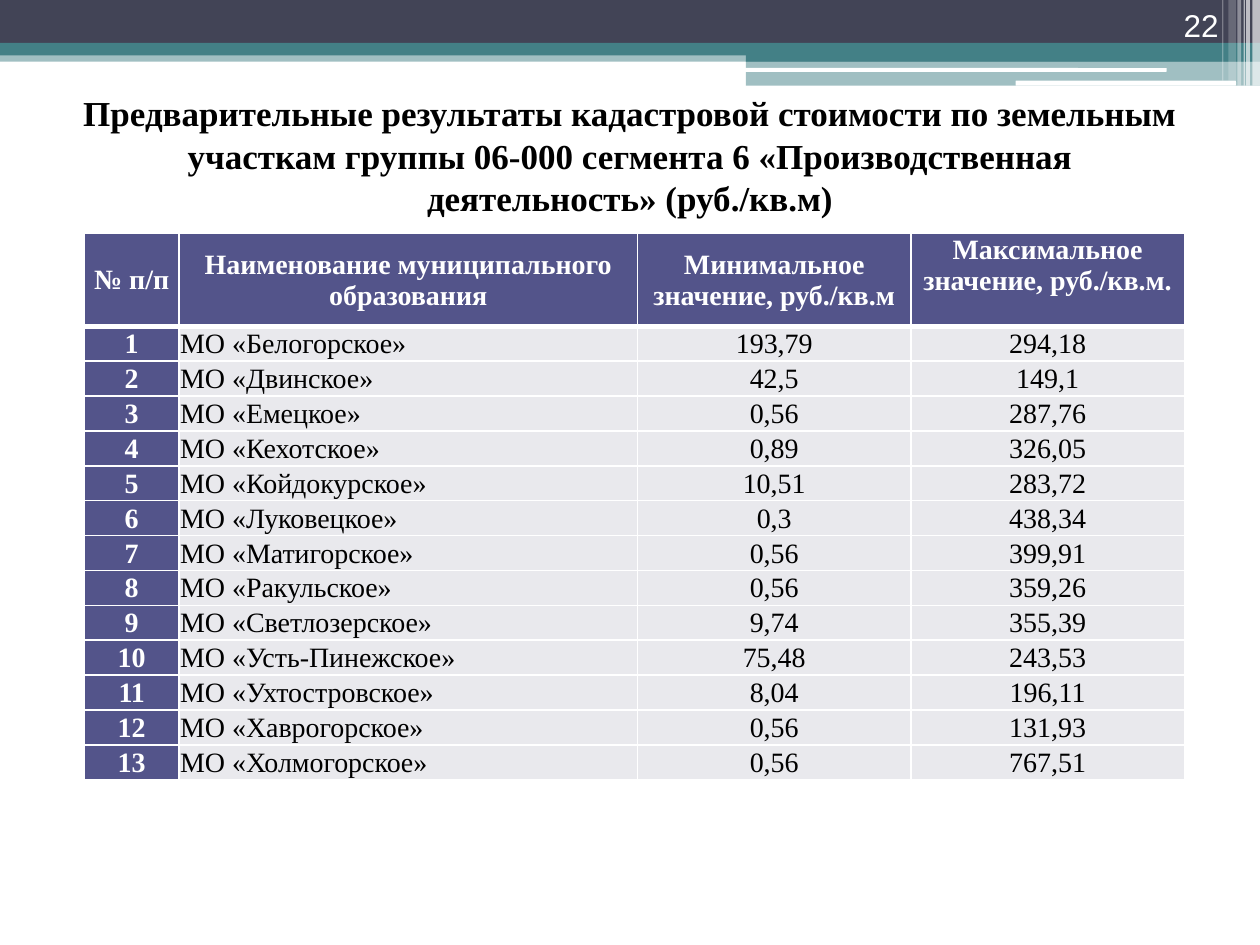
from lxml import etree
from pptx import Presentation
from pptx import util as u
from pptx.dml.color import RGBColor
from pptx.enum import shapes, text
from pptx.oxml import ns

WHITE, BLACK, NAVY, TEAL = "FFFFFF", "000000", "424456", "438086"
HEADER_FILL, BODY_FILL = "53548A", "E9E9ED"
SERIF = "Times New Roman"

TITLE = ("Предварительные результаты кадастровой стоимости по земельным участкам "
         "группы 06-000 сегмента 6 «Производственная деятельность» (руб./кв.м)")
HEADERS = ("№ п/п", "Наименование муниципального образования",
           "Минимальное значение, руб./кв.м", "Максимальное значение, руб./кв.м.")
MUNICIPALITIES = (
    ("Белогорское", "193,79", "294,18"),
    ("Двинское", "42,5", "149,1"),
    ("Емецкое", "0,56", "287,76"),
    ("Кехотское", "0,89", "326,05"),
    ("Койдокурское", "10,51", "283,72"),
    ("Луковецкое", "0,3", "438,34"),
    ("Матигорское", "0,56", "399,91"),
    ("Ракульское", "0,56", "359,26"),
    ("Светлозерское", "9,74", "355,39"),
    ("Усть-Пинежское", "75,48", "243,53"),
    ("Ухтостровское", "8,04", "196,11"),
    ("Хаврогорское", "0,56", "131,93"),
    ("Холмогорское", "0,56", "767,51"),
)
COLUMN_WIDTHS = (0.75, 3.64, 2.17, 2.17)
HEADER_HEIGHT, ROW_HEIGHT = 0.74, 0.26

# left, top, width, height, colour, opacity in percent
BANDS = (
    (0, 0.4, 10, 0.09, TEAL, 50),
    (0, 0, 10, 0.34, NAVY, 100),
    (0, 0.34, 10, 0.1, TEAL, 100),
    (5.92, 0.39, 4.08, 0.1, TEAL, 100),
    (5.92, 0.48, 4.08, 0.2, TEAL, 50),
)
ROUNDED_BARS = ((5.91, 0.54, 3.35, 0.03), (8.06, 0.64, 1.75, 0.04))
# left, width, height, opacity in percent
STRIPES = ((9.94, 0.06, 0.68, 65), (9.89, 0.03, 0.68, 65), (9.87, 0.01, 0.68, 60),
           (9.82, 0.03, 0.68, 40), (9.75, 0.06, 0.64, 20), (9.7, 0.01, 0.64, 30))


def paint(fill, colour):
    fill.solid()
    fill.fore_color.rgb = RGBColor.from_string(colour)


def add_bar(slide, left, top, width, height, colour, opacity=100,
            kind=shapes.MSO_SHAPE.RECTANGLE):
    bar = slide.shapes.add_shape(kind, *map(u.Inches, (left, top, width, height)))
    bar.shadow.inherit = False
    bar.line.fill.background()
    paint(bar.fill, colour)
    if opacity < 100:
        tint = bar.fill._xPr.find(".//" + ns.qn("a:srgbClr"))
        etree.SubElement(tint, ns.qn("a:alpha"), val=str(opacity * 1000))


def add_header_band(slide):
    for band in BANDS:
        add_bar(slide, *band)
    for bar in ROUNDED_BARS:
        add_bar(slide, *bar, WHITE, kind=shapes.MSO_SHAPE.ROUNDED_RECTANGLE)
    for left, width, height, opacity in STRIPES:
        add_bar(slide, left, 0, width, height, WHITE, opacity)


def write(paragraph, words, size, colour, font=SERIF, bold=False,
          align=text.PP_ALIGN.CENTER):
    paragraph.alignment = align
    run = paragraph.add_run()
    run.text = words
    run.font.size = u.Pt(size)
    run.font.name = font
    run.font.bold = bold
    run.font.color.rgb = RGBColor.from_string(colour)


def add_title(slide):
    title = slide.shapes.title
    title.left, title.top, title.width, title.height = map(u.Inches, (0.5, 0.68, 9, 1.17))
    frame = title.text_frame
    frame.word_wrap = True
    frame.auto_size = text.MSO_AUTO_SIZE.NONE
    frame.vertical_anchor = text.MSO_ANCHOR.TOP
    write(frame.paragraphs[0], TITLE, 20, BLACK, bold=True)


def add_page_number(slide, number):
    box = slide.shapes.add_textbox(*map(u.Inches, (8.94, 0, 0.83, 0.4)))
    frame = box.text_frame
    frame.word_wrap = True
    frame.vertical_anchor = text.MSO_ANCHOR.BOTTOM
    write(frame.paragraphs[0], number, 18, WHITE, "Arial", align=text.PP_ALIGN.RIGHT)


def set_borders(cell, top, bottom):
    """Draw white borders; top and bottom are widths in points."""
    properties = cell._tc.get_or_add_tcPr()
    for side, width in (("L", 1), ("R", 1), ("T", top), ("B", bottom)):
        line = etree.SubElement(properties, ns.qn("a:ln" + side), w=str(u.Pt(width)))
        fill = etree.SubElement(line, ns.qn("a:solidFill"))
        etree.SubElement(fill, ns.qn("a:srgbClr"), val=WHITE)


def fill_cell(cell, words, row, column):
    heading = row == 0 or column == 0
    set_borders(cell, 3 if row == 1 else 1, 3 if row == 0 else 1)
    paint(cell.fill, HEADER_FILL if heading else BODY_FILL)
    cell.margin_left = cell.margin_right = cell.margin_top = u.Inches(0.01)
    cell.margin_bottom = 0
    last_header = row == 0 and column == len(HEADERS) - 1
    cell.vertical_anchor = text.MSO_ANCHOR.TOP if last_header else text.MSO_ANCHOR.MIDDLE
    name_cell = row > 0 and column == 1
    write(cell.text_frame.paragraphs[0], words, 16, WHITE if heading else BLACK,
          bold=heading,
          align=text.PP_ALIGN.LEFT if name_cell else text.PP_ALIGN.CENTER)


def add_value_table(slide):
    rows = [HEADERS]
    for number, (name, minimum, maximum) in enumerate(MUNICIPALITIES, 1):
        rows.append((str(number), f"МО «{name}»", minimum, maximum))
    height = HEADER_HEIGHT + ROW_HEIGHT * len(MUNICIPALITIES)
    table = slide.shapes.add_table(
        len(rows), len(HEADERS),
        *map(u.Inches, (0.67, 1.85, sum(COLUMN_WIDTHS), height))).table
    for column, width in zip(table.columns, COLUMN_WIDTHS):
        column.width = u.Inches(width)
    for row_index, values in enumerate(rows):
        table.rows[row_index].height = u.Inches(ROW_HEIGHT if row_index else HEADER_HEIGHT)
        for column_index, value in enumerate(values):
            fill_cell(table.cell(row_index, column_index), value, row_index, column_index)


def main():
    presentation = Presentation()
    presentation.slide_width, presentation.slide_height = u.Inches(10), u.Inches(7.5)
    slide = presentation.slides.add_slide(presentation.slide_layouts.get_by_name("Title Only"))
    add_header_band(slide)
    add_page_number(slide, "22")
    add_value_table(slide)
    add_title(slide)
    presentation.save("out.pptx")


if __name__ == "__main__":
    main()
